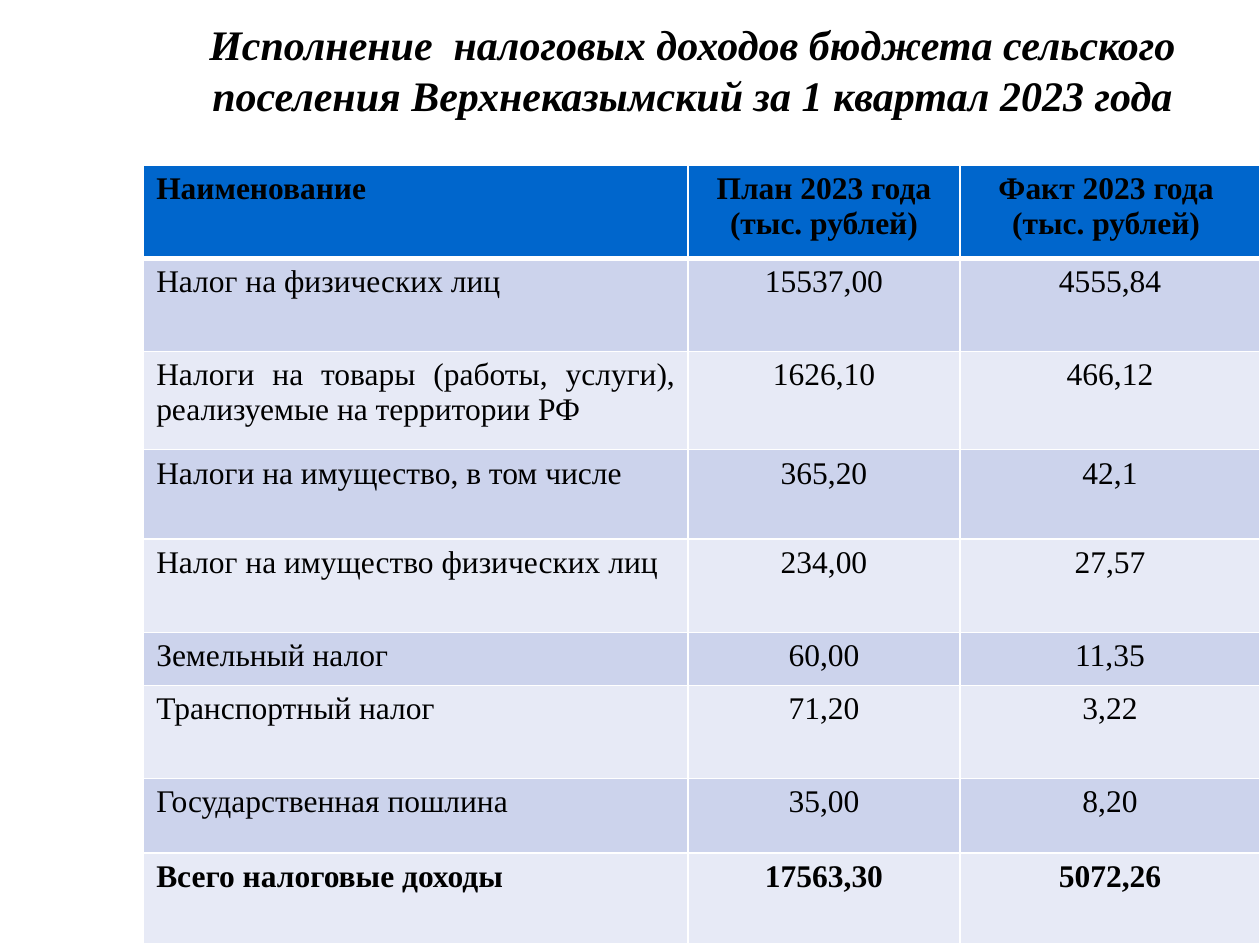
from lxml import etree
from pptx import Presentation
from pptx.dml.color import RGBColor
from pptx.enum.text import MSO_ANCHOR, PP_ALIGN
from pptx.oxml.ns import qn
from pptx.util import Inches, Pt

LEFT, CENTER, JUSTIFY = PP_ALIGN.LEFT, PP_ALIGN.CENTER, PP_ALIGN.JUSTIFY
MIDDLE = MSO_ANCHOR.MIDDLE
FONT = "Times New Roman"
BLACK = RGBColor(0x00, 0x00, 0x00)
WHITE = RGBColor(0xFF, 0xFF, 0xFF)
HEADER_BLUE = RGBColor(0x00, 0x66, 0xCC)
BANDS = (RGBColor(0xCC, 0xD3, 0xEC), RGBColor(0xE7, 0xEA, 0xF6))

TITLE = ("Исполнение  налоговых доходов бюджета сельского",
         "поселения Верхнеказымский за 1 квартал 2023 года")
HEADER = (("Наименование",),
          ("План 2023 года", "(тыс. рублей)"),
          ("Факт 2023 года ", "(тыс. рублей) "))
TAXES = [
    ("Налог на физических лиц", "15537,00", "4555,84"),
    ("Налоги на товары (работы, услуги), реализуемые на территории РФ",
     "1626,10", "466,12"),
    ("Налоги на имущество, в том числе", "365,20", "42,1"),
    ("Налог на имущество физических лиц", "234,00", "27,57"),
    ("Земельный налог", "60,00", "11,35"),
    ("Транспортный налог", "71,20", "3,22"),
    ("Государственная пошлина", "35,00", "8,20"),
    ("Всего налоговые доходы", "17563,30", "5072,26"),
]
COLUMN_WIDTHS = (4.32, 2.16, 2.38)
ROW_HEIGHTS = (0.74, 0.74, 0.78, 0.71, 0.74, 0.42, 0.74, 0.59, 0.72)


def add_run(paragraph, text, size, bold, italic=False):
    run = paragraph.add_run()
    run.text = text
    font = run.font
    font.name, font.size = FONT, Pt(size)
    font.bold, font.italic = bold, italic
    font.color.rgb = BLACK


def add_title(slide):
    box = slide.shapes.add_textbox(Inches(1), Inches(0), Inches(8.99), Inches(1.1))
    frame = box.text_frame
    frame.word_wrap = True
    frame.vertical_anchor = MIDDLE
    paragraph = frame.paragraphs[0]
    paragraph.alignment = CENTER
    first, second = TITLE
    add_run(paragraph, first, 24, True, True)
    paragraph.add_line_break()
    add_run(paragraph, second, 24, True, True)


def set_borders(cell, bottom_width):
    properties = cell._tc.get_or_add_tcPr()
    for side, width in (("L", 1), ("R", 1), ("T", 1), ("B", bottom_width)):
        line = etree.SubElement(properties, qn(f"a:ln{side}"), w=str(Pt(width)))
        fill = etree.SubElement(line, qn("a:solidFill"))
        etree.SubElement(fill, qn("a:srgbClr"), val=str(WHITE))


def fill_cell(cell, lines, color, alignment, bold, bottom_width):
    set_borders(cell, bottom_width)
    cell.fill.solid()
    cell.fill.fore_color.rgb = color
    frame = cell.text_frame
    for index, text in enumerate(lines):
        paragraph = frame.add_paragraph() if index else frame.paragraphs[0]
        paragraph.alignment = alignment
        add_run(paragraph, text, 18, bold)


def add_tax_table(slide):
    table = slide.shapes.add_table(
        len(ROW_HEIGHTS), len(COLUMN_WIDTHS), Inches(1.14), Inches(1.31),
        Inches(sum(COLUMN_WIDTHS)), Inches(sum(ROW_HEIGHTS))).table
    for column, width in zip(table.columns, COLUMN_WIDTHS):
        column.width = Inches(width)
    for row, height in zip(table.rows, ROW_HEIGHTS):
        row.height = Inches(height)

    for col, lines in enumerate(HEADER):
        fill_cell(table.cell(0, col), lines, HEADER_BLUE,
                  CENTER if col else LEFT, True, 3)
    for row, tax in enumerate(TAXES, start=1):
        for col, text in enumerate(tax):
            fill_cell(table.cell(row, col), (text,), BANDS[(row - 1) % 2],
                      CENTER if col else JUSTIFY, row == len(TAXES), 1)
    for col in range(len(HEADER)):
        top = table.cell(1, col)._tc.tcPr.find(qn("a:lnT"))
        top.set("w", str(Pt(3)))


def main():
    presentation = Presentation()
    presentation.slide_width, presentation.slide_height = Inches(10), Inches(7.5)
    slide = presentation.slides.add_slide(presentation.slide_layouts[6])
    add_title(slide)
    add_tax_table(slide)
    presentation.save("out.pptx")


if __name__ == "__main__":
    main()
